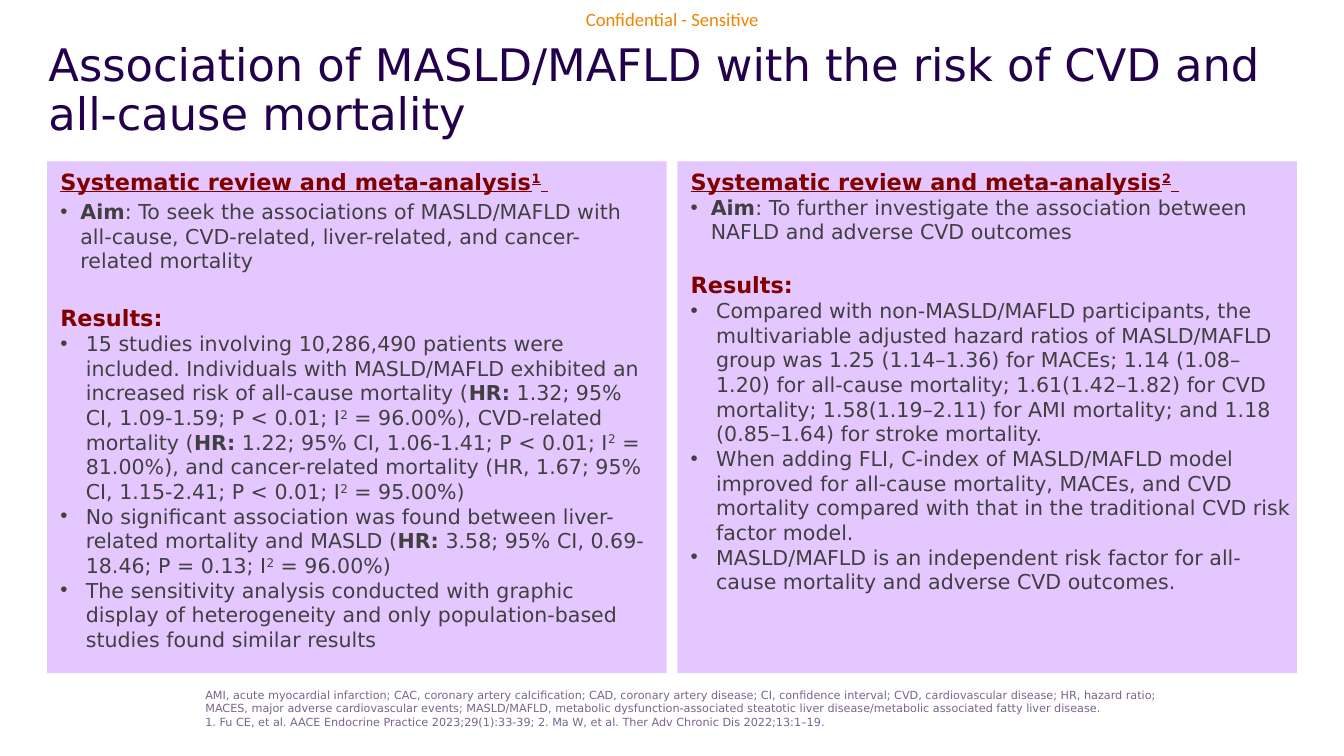
from lxml import etree
from pptx import Presentation
from pptx.dml.color import RGBColor
from pptx.enum.shapes import MSO_SHAPE
from pptx.enum.text import MSO_ANCHOR, MSO_AUTO_SIZE, PP_ALIGN
from pptx.oxml.ns import qn
from pptx.util import Inches, Pt

RECT = MSO_SHAPE.RECTANGLE
TOP = MSO_ANCHOR.TOP
LEFT, CENTER = PP_ALIGN.LEFT, PP_ALIGN.CENTER
NO_FIT = MSO_AUTO_SIZE.NONE

FONT = "DejaVu Sans"
MAROON, GREY, LILAC, INDIGO = "800000", "404040", "E5C7FF", "23004C"
LABEL = "Confidential - Sensitive"
TITLE = "Association of MASLD/MAFLD with the risk of CVD and all-cause mortality"
PANELS = [
    {
        "heading": "Systematic review and meta-analysis^1^ ",
        "aim": "*Aim*: To seek the associations of MASLD/MAFLD with all-cause, CVD-related, "
               "liver-related, and cancer-related mortality",
        "results": [
            "15 studies involving 10,286,490 patients were included. Individuals with MASLD/MAFLD "
            "exhibited an increased risk of all-cause mortality (*HR:* 1.32; 95% CI, 1.09-1.59; "
            "P < 0.01; I^2^ = 96.00%), CVD-related mortality (*HR:* 1.22; 95% CI, 1.06-1.41; "
            "P < 0.01; I^2^ = 81.00%), and cancer-related mortality (HR, 1.67; 95% CI, 1.15-2.41; "
            "P < 0.01; I^2^ = 95.00%)",
            "No significant association was found between liver-related mortality and MASLD "
            "(*HR:* 3.58; 95% CI, 0.69-18.46; P = 0.13; I^2^ = 96.00%)",
            "The sensitivity analysis conducted with graphic display of heterogeneity and only "
            "population-based studies found similar results",
        ],
        "aim_gap": 2.2, "results_gap": 16.7, "right_inset": 0.1,
    },
    {
        "heading": "Systematic review and meta-analysis^2^ ",
        "aim": "*Aim*: To further investigate the association between NAFLD and adverse CVD outcomes",
        "results": [
            "Compared with non-MASLD/MAFLD participants, the multivariable adjusted hazard ratios of "
            "MASLD/MAFLD group was 1.25 (1.14–1.36) for MACEs; 1.14 (1.08–1.20) for all-cause "
            "mortality; 1.61(1.42–1.82) for CVD mortality; 1.58(1.19–2.11) for AMI mortality; and "
            "1.18 (0.85–1.64) for stroke mortality.",
            "When adding FLI, C-index of MASLD/MAFLD model improved for all-cause mortality, MACEs, "
            "and CVD mortality compared with that in the traditional CVD risk factor model.",
            "MASLD/MAFLD is an independent risk factor for all-cause mortality and adverse CVD "
            "outcomes.",
        ],
        "aim_gap": 0, "results_gap": 14.5, "right_inset": 0.03,
    },
]
FOOTNOTES = [
    "AMI, acute myocardial infarction; CAC, coronary artery calcification; CAD, coronary artery "
    "disease; CI, confidence interval; CVD, cardiovascular disease; HR, hazard ratio; MACES, major "
    "adverse cardiovascular events; MASLD/MAFLD, metabolic dysfunction-associated steatotic liver "
    "disease/metabolic associated fatty liver disease.",
    "1. Fu CE, et al. AACE Endocrine Practice 2023;29(1):33-39; "
    "2. Ma W, et al. Ther Adv Chronic Dis 2022;13:1–19.",
]
SLIDE_W = 10
SLIDE_H = SLIDE_W * 9 / 16
MARGIN, PANEL_TOP, PANEL_W, PANEL_H, GUTTER = 0.35, 1.2, 4.61, 3.81, 0.08


def rgb(value):
    return RGBColor.from_string(value)


def set_frame(tf, left=0, top=0, right=0, bottom=0):
    tf.word_wrap = True
    tf.auto_size = NO_FIT
    tf.vertical_anchor = TOP
    tf.margin_left, tf.margin_top = Inches(left), Inches(top)
    tf.margin_right, tf.margin_bottom = Inches(right), Inches(bottom)


def set_bullet(p, indent):
    pPr = p._p.get_or_add_pPr()
    pPr.set("marL", str(Inches(indent)))
    pPr.set("indent", str(-Inches(indent)))
    etree.SubElement(pPr, qn("a:buFont")).set("typeface", "Arial")
    etree.SubElement(pPr, qn("a:buChar")).set("char", "•")


def write(tf, index, text, size, color, font=FONT, bold=False, underline=False,
          indent=0, before=0, align=LEFT):
    p = tf.paragraphs[0] if index == 0 else tf.add_paragraph()
    p.alignment = align
    if index:
        p.space_before = Pt(before)
    if indent:
        set_bullet(p, indent)
    for i, part in enumerate(text.split("*")):
        for j, piece in enumerate(part.split("^")):
            if not piece:
                continue
            r = p.add_run()
            r.text = piece
            r.font.name, r.font.size = font, Pt(size)
            r.font.color.rgb = rgb(color)
            r.font.bold = bold or i % 2 == 1
            r.font.underline = underline
            if j % 2:
                r._r.get_or_add_rPr().set("baseline", "30000")
    return p


def add_text(s, left, top, width, height):
    return s.shapes.add_textbox(*map(Inches, (left, top, width, height))).text_frame


def add_panel(s, column, panel):
    left = MARGIN + column * (PANEL_W + GUTTER)
    sp = s.shapes.add_shape(RECT, *map(Inches, (left, PANEL_TOP, PANEL_W, PANEL_H)))
    sp.shadow.inherit = False
    sp.fill.solid()
    sp.fill.fore_color.rgb = rgb(LILAC)
    sp.line.fill.background()
    tf = sp.text_frame
    set_frame(tf, 0.1, 0.05, panel["right_inset"], 0.05)
    write(tf, 0, panel["heading"], 12, MAROON, bold=True, underline=True)
    write(tf, 1, panel["aim"], 11, GREY, indent=0.15, before=panel["aim_gap"])
    write(tf, 2, "Results:", 12, MAROON, bold=True, before=panel["results_gap"])
    for index, text in enumerate(panel["results"], 3):
        write(tf, index, text, 11, GREY, indent=0.19)


def main():
    prs = Presentation()
    prs.slide_width, prs.slide_height = Inches(SLIDE_W), Inches(SLIDE_H)
    s = prs.slides.add_slide(prs.slide_layouts[5])

    title = s.shapes.title
    title.left, title.top, title.width, title.height = map(Inches, (0.36, 0.32, 9.28, 0.79))
    set_frame(title.text_frame)
    write(title.text_frame, 0, TITLE, 24, INDIGO).line_spacing = 0.9

    tf = add_text(s, 4.34, 0.06, 1.32, 0.17)
    set_frame(tf)
    write(tf, 0, LABEL, 10, "F08400", font="Calibri", align=CENTER)

    for column, panel in enumerate(PANELS):
        add_panel(s, column, panel)

    tf = add_text(s, 1.43, 5.07, 7.6, 0.42)
    set_frame(tf, 0.1, 0.05, 0.1, 0.05)
    for index, text in enumerate(FOOTNOTES):
        write(tf, index, text, 6, "7A6490")

    prs.save("out.pptx")


if __name__ == "__main__":
    main()
